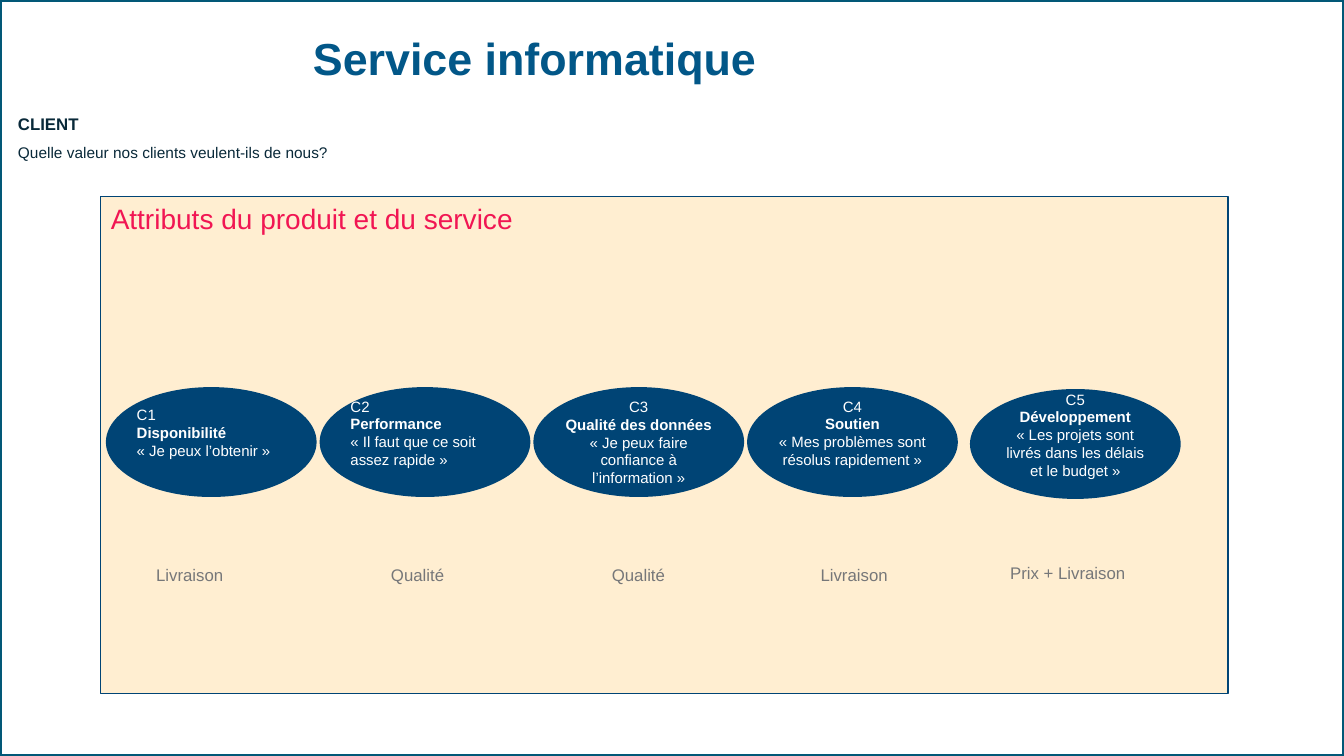
from dataclasses import dataclass

from lxml import etree
from pptx import Presentation
from pptx.dml.color import RGBColor
from pptx.enum.shapes import MSO_SHAPE as Shape
from pptx.enum.text import MSO_ANCHOR as Anchor, PP_ALIGN as Align
from pptx.oxml.ns import qn
from pptx.util import Inches, Pt


@dataclass(frozen=True)
class Theme:
    font: str = "Arial"
    frame: str = "025877"
    title: str = "025788"
    navy: str = "004475"
    orange: str = "FFAA1B"
    pink: str = "F11653"
    ink: str = "092939"
    grey: str = "767779"
    white: str = "FFFFFF"
    title_size: float = 32
    heading_size: float = 20
    label_size: float = 12
    question_size: float = 11
    oval_size: float = 10.7


@dataclass(frozen=True)
class Box:
    left: float
    top: float
    width: float
    height: float

    def inches(self):
        return [Inches(n) for n in (self.left, self.top, self.width, self.height)]


@dataclass(frozen=True)
class Attribute:
    code: str
    name: str
    quote: str
    category: str
    label_left: float
    label_width: float
    align: Align = Align.CENTER
    spare_line: float = 0.18
    shift: tuple = (0, 0)
    label_drop: float = 1.71


THEME = Theme()
SLIDE = Box(0, 0, 13.33, 7.5)
ATTRIBUTES = [
    Attribute("C1", "Disponibilité", "«\u00a0Je peux l’obtenir\u00a0»",
              "Livraison", 0.4, 0.87, align=Align.LEFT),
    Attribute("C2", "Performance", "«\u00a0Il faut que ce soit assez rapide\u00a0»",
              "Qualité", 0.61, 0.73, align=Align.LEFT),
    Attribute("C3", "Qualité des données", "« Je peux faire confiance à l’information »",
              "Qualité", 0.68, 0.73, spare_line=0),
    Attribute("C4", "Soutien", "«\u00a0Mes problèmes sont résolus rapidement\u00a0»",
              "Livraison", 0.63, 0.87),
    Attribute("C5", "Développement",
              "«\u00a0Les projets sont livrés dans les délais et le budget\u00a0»",
              "Prix + Livraison", 0.3, 1.35, shift=(0.09, 0.02), label_drop=1.67),
]


def write(frame, text, size, color, bold=False, align=Align.LEFT, before=None, spacing=None):
    paragraph = frame.paragraphs[0]
    if paragraph.runs:
        paragraph = frame.add_paragraph()
    paragraph.alignment = align
    if before is not None:
        paragraph.space_before = Pt(before)
    if spacing is not None:
        paragraph.line_spacing = spacing
    run = paragraph.add_run()
    run.text = text
    font = run.font
    font.name, font.size, font.bold = THEME.font, Pt(size), bold
    font.color.rgb = RGBColor.from_string(color)


def add_shape(slide, kind, box, fill=None, opacity=None, line=None, weight=0.75):
    shape = slide.shapes.add_shape(kind, *box.inches())
    shape.shadow.inherit = False
    if fill:
        shape.fill.solid()
        shape.fill.fore_color.rgb = RGBColor.from_string(fill)
    else:
        shape.fill.background()
    if opacity is not None:
        color = shape.fill._xPr.find(qn("a:solidFill"))[0]
        etree.SubElement(color, qn("a:alpha"), val=str(opacity * 1000))
    if line:
        shape.line.color.rgb = RGBColor.from_string(line)
        shape.line.width = Pt(weight)
    else:
        shape.line.fill.background()
    return shape


def add_text_frame(slide, box, wrap=True):
    frame = slide.shapes.add_textbox(*box.inches()).text_frame
    frame.word_wrap = wrap
    return frame


def add_title(slide, box):
    title = slide.shapes.title
    title.left, title.top, title.width, title.height = box.inches()
    title.text_frame.vertical_anchor = Anchor.MIDDLE
    write(title.text_frame, "Service informatique", THEME.title_size, THEME.title,
          bold=True, align=Align.CENTER, spacing=0.9)


def add_client_question(slide, box):
    frame = add_text_frame(slide, box)
    write(frame, "CLIENT", THEME.label_size, THEME.ink, bold=True)
    write(frame, "Quelle valeur nos clients veulent-ils de nous?",
          THEME.question_size, THEME.ink, before=6.5)


def add_attribute(slide, box, attribute):
    oval = add_shape(slide, Shape.OVAL, box, fill=THEME.navy)
    frame = oval.text_frame
    frame.word_wrap = True
    frame.vertical_anchor = Anchor.MIDDLE
    frame.margin_left = frame.margin_right = 0
    frame.margin_top = Inches(0.05)
    frame.margin_bottom = Inches(0.05 + attribute.spare_line)
    for text in (attribute.code, attribute.name, attribute.quote):
        write(frame, text, THEME.oval_size, THEME.white,
              bold=text == attribute.name, align=attribute.align)

    label_box = Box(box.left + attribute.label_left, box.top + attribute.label_drop,
                    attribute.label_width, 0.3)
    label = add_text_frame(slide, label_box, wrap=False)
    write(label, attribute.category, THEME.label_size, THEME.grey)


def add_attribute_panel(slide, box):
    panel = add_shape(slide, Shape.RECTANGLE, box, fill=THEME.orange, opacity=20,
                      line=THEME.navy)
    panel.text_frame.word_wrap = True
    panel.text_frame.vertical_anchor = Anchor.TOP
    write(panel.text_frame, "Attributs du produit et du service",
          THEME.heading_size, THEME.pink)
    pitch = 2.12
    for index, attribute in enumerate(ATTRIBUTES):
        right, down = attribute.shift
        oval_box = Box(box.left + 0.05 + index * pitch + right, box.top + 1.89 + down,
                       2.09, 1.09)
        add_attribute(slide, oval_box, attribute)


def main():
    presentation = Presentation()
    presentation.slide_width = Inches(SLIDE.width)
    presentation.slide_height = Inches(SLIDE.height)
    slide = presentation.slides.add_slide(presentation.slide_layouts[5])
    add_shape(slide, Shape.RECTANGLE, SLIDE, line=THEME.frame, weight=3)
    add_title(slide, Box(0.37, 0.28, 9.87, 0.64))
    add_client_question(slide, Box(0.08, 1.08, 5.94, 0.86))
    add_attribute_panel(slide, Box(1, 1.95, 11.18, 4.93))
    presentation.save("out.pptx")


if __name__ == "__main__":
    main()
